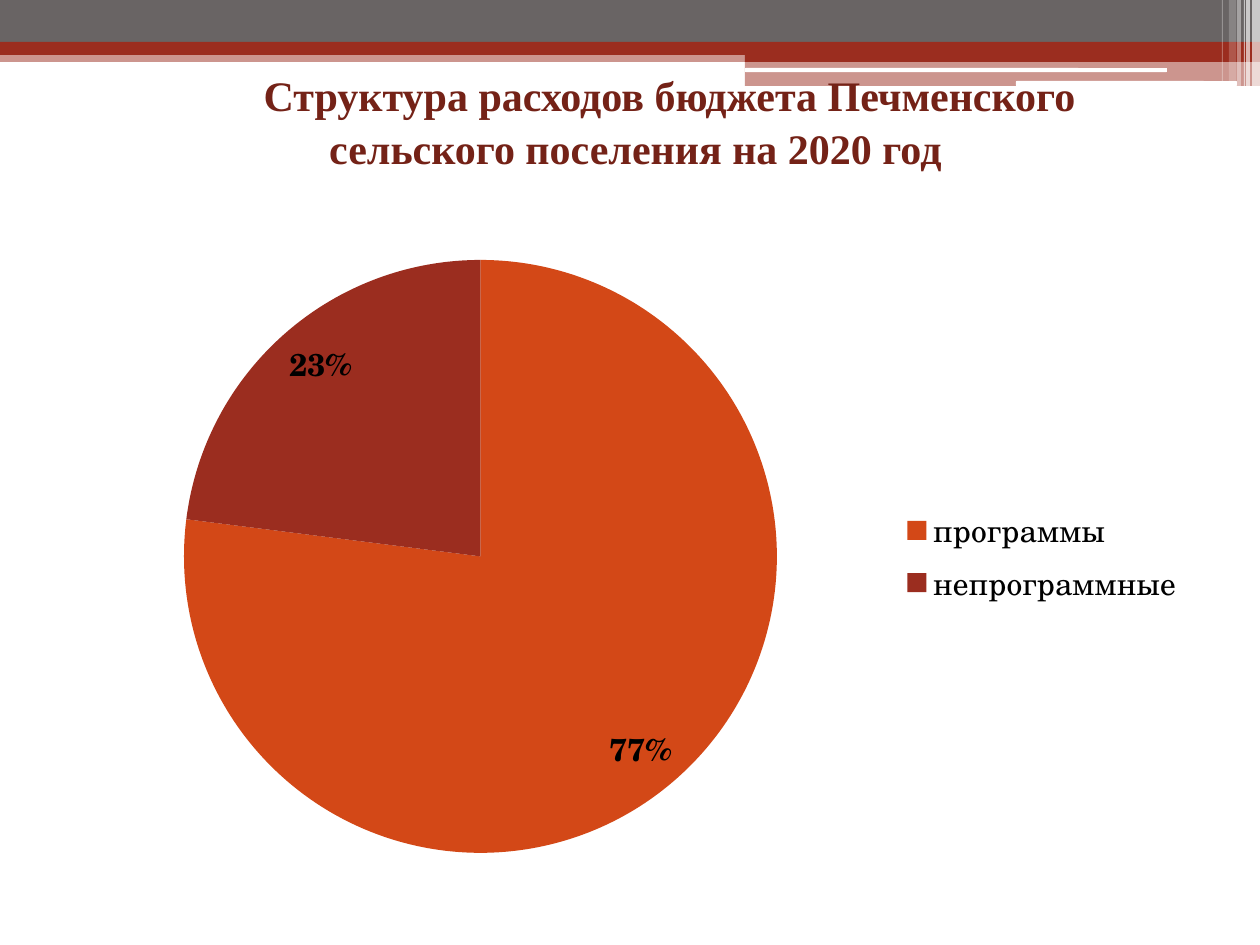
from dataclasses import dataclass

from lxml import etree
from pptx import Presentation
from pptx.chart.data import CategoryChartData
from pptx.dml.color import RGBColor
from pptx.enum.chart import XL_CHART_TYPE, XL_LABEL_POSITION, XL_LEGEND_POSITION
from pptx.enum.shapes import MSO_SHAPE
from pptx.enum.text import MSO_ANCHOR, PP_ALIGN
from pptx.oxml.ns import qn
from pptx.util import Pt

PIE = XL_CHART_TYPE.PIE
INSIDE_END = XL_LABEL_POSITION.INSIDE_END
LEGEND_RIGHT = XL_LEGEND_POSITION.RIGHT
RECTANGLE = MSO_SHAPE.RECTANGLE
ROUNDED = MSO_SHAPE.ROUNDED_RECTANGLE
MIDDLE = MSO_ANCHOR.MIDDLE
CENTER = PP_ALIGN.CENTER

PX_PER_INCH = 126
PAGE_WIDTH, PAGE_HEIGHT = 1260, 945


@dataclass(frozen=True)
class Theme:
    gray: str = "696464"
    red: str = "9B2D1F"
    orange: str = "D34817"
    title: str = "742217"
    white: str = "FFFFFF"
    black: str = "000000"
    title_font: str = "Times New Roman"
    chart_font: str = "TeX Gyre Schola"
    title_size: int = 24
    chart_size: int = 18


THEME = Theme()


def px(length):
    return round(length * 914400 / PX_PER_INCH)


def color(value):
    return RGBColor.from_string(value)


def add_bar(page, box, fill, opacity=100, kind=RECTANGLE):
    bar = page.shapes.add_shape(kind, *map(px, box))
    bar.shadow.inherit = False
    bar.line.fill.background()
    bar.fill.solid()
    bar.fill.fore_color.rgb = color(fill)
    if opacity < 100:
        tint = bar.fill._xPr.find(".//" + qn("a:srgbClr"))
        etree.SubElement(tint, qn("a:alpha"), val=str(opacity * 1000))


def add_header(page, box):
    left, top, width, height = box
    right = left + width
    step = left + 745
    step_width = right - step

    # Full-width bands and the lower step on the right
    add_bar(page, (left, top + 50, width, 12), THEME.red, 50)
    add_bar(page, (left, top, width, 43), THEME.gray)
    add_bar(page, (left, top + 42, width, 13), THEME.red)
    add_bar(page, (step, top + 49, step_width, 13), THEME.red)
    add_bar(page, (step, top + 61, step_width, 25), THEME.red, 50)

    # White slots in the step
    add_bar(page, (step, top + 68, 422, 4), THEME.white, kind=ROUNDED)
    add_bar(page, (left + 1016, top + 81, 221, 5), THEME.white, kind=ROUNDED)

    # Translucent stripes: distance from the right edge, width, height, opacity
    stripes = [
        (8, 8, height, 65), (14, 4, height, 65), (16, 1, height, 60),
        (23, 4, height, 40), (31, 7, 81, 20), (38, 1, 81, 30),
    ]
    for offset, stripe_width, stripe_height, opacity in stripes:
        stripe = (right - offset, top, stripe_width, stripe_height)
        add_bar(page, stripe, THEME.white, opacity)


def add_title(page, box, text):
    frame = page.shapes.add_textbox(*map(px, box)).text_frame
    frame.word_wrap = True
    frame.vertical_anchor = MIDDLE
    para = frame.paragraphs[0]
    para.text = text
    para.alignment = CENTER
    para.line_spacing = 1.07
    para.font.name = THEME.title_font
    para.font.size = Pt(THEME.title_size)
    para.font.bold = True
    para.font.color.rgb = color(THEME.title)
    # First-line indent
    para._p.get_or_add_pPr().set("indent", str(px(68)))


def set_plot_layout(chart, box, plot):
    """Fix the inner plot area; plot is relative to the chart box."""
    area = chart._chartSpace.find(".//" + qn("c:plotArea"))
    layout = area.find(qn("c:layout"))
    if layout is None:
        layout = etree.Element(qn("c:layout"))
        area.insert(0, layout)
    manual = etree.SubElement(layout, qn("c:manualLayout"))
    etree.SubElement(manual, qn("c:layoutTarget"), val="inner")
    for tag in ("xMode", "yMode"):
        etree.SubElement(manual, qn("c:" + tag), val="edge")
    for tag, length, whole in zip("xywh", plot, box[2:] * 2):
        etree.SubElement(manual, qn("c:" + tag), val=f"{length / whole:.4f}")


def add_pie(page, box, shares):
    data = CategoryChartData(number_format="0%")
    data.categories = [name for name, value, fill in shares]
    data.add_series("Series 1", [value for name, value, fill in shares])
    chart = page.shapes.add_chart(PIE, *map(px, box), data).chart
    chart.has_title = False
    chart.font.name = THEME.chart_font
    chart.font.size = Pt(THEME.chart_size)
    chart.font.color.rgb = color(THEME.black)
    set_plot_layout(chart, box, (120, 36, 593, 593))

    # Legend
    chart.has_legend = True
    chart.legend.position = LEGEND_RIGHT
    chart.legend.include_in_layout = False

    # Slices
    pie = chart.plots[0]
    pie.vary_by_categories = True
    for index, (name, value, fill) in enumerate(shares):
        slice_format = pie.series[0].points[index].format
        slice_format.fill.solid()
        slice_format.fill.fore_color.rgb = color(fill)
        slice_format.line.fill.background()

    # Value labels
    pie.has_data_labels = True
    labels = pie.data_labels
    labels.show_value = True
    labels.show_percentage = False
    labels.number_format = "0%"
    labels.number_format_is_linked = False
    labels.position = INSIDE_END
    labels.font.name = THEME.chart_font
    labels.font.size = Pt(THEME.chart_size)
    labels.font.bold = True
    labels.font.color.rgb = color(THEME.black)


def main():
    deck = Presentation()
    deck.slide_width, deck.slide_height = px(PAGE_WIDTH), px(PAGE_HEIGHT)
    page = deck.slides.add_slide(deck.slide_layouts[6])
    add_header(page, (0, 0, PAGE_WIDTH, 86))
    add_title(
        page, (154, 55, 963, 129),
        "Структура расходов бюджета Печменского сельского поселения на 2020 год",
    )
    add_pie(page, (64, 224, 1133, 665), [
        ("программы", 0.77, THEME.orange),
        ("непрограммные", 0.23, THEME.red),
    ])
    deck.save("out.pptx")


if __name__ == "__main__":
    main()
